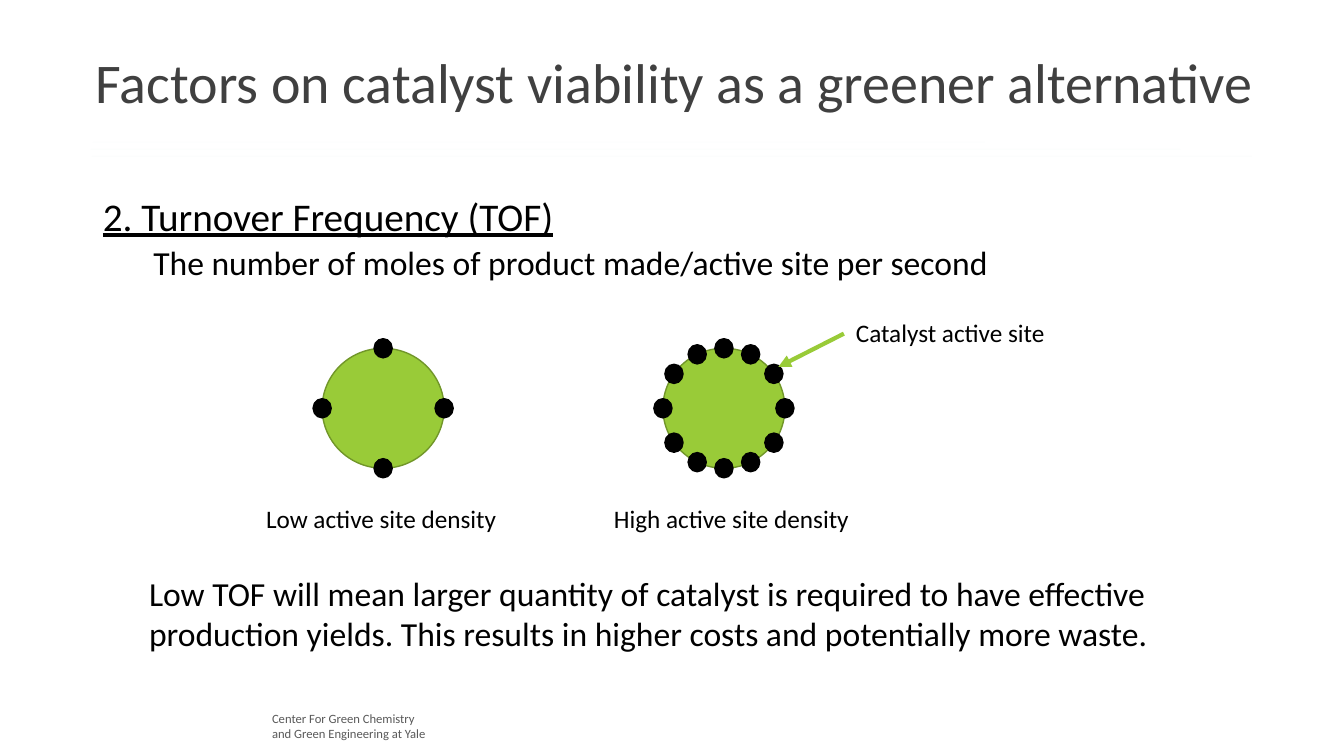
from math import cos, radians, sin

from lxml import etree
from pptx import Presentation
from pptx.dml.color import RGBColor
from pptx.enum.shapes import MSO_CONNECTOR, MSO_SHAPE
from pptx.enum.text import MSO_ANCHOR, MSO_AUTO_SIZE, PP_ALIGN
from pptx.oxml.ns import qn
from pptx.util import Inches, Pt

GREEN, DARK_GREEN, BLACK = "99CB38", "719629", "000000"


def write(shape, box, lines, size=18, color=BLACK, wrap=True, anchor=MSO_ANCHOR.TOP, spacing=1.0):
    """Place a shape and fill it with one unbulleted, left-aligned paragraph per line."""
    shape.left, shape.top, shape.width, shape.height = map(Inches, box)
    frame = shape.text_frame
    frame.text = "\n".join(lines)
    frame.word_wrap = wrap
    frame.auto_size = MSO_AUTO_SIZE.NONE
    frame.vertical_anchor = anchor
    for paragraph in frame.paragraphs:
        properties = paragraph._p.get_or_add_pPr()
        properties.set("marL", "0")
        properties.set("indent", "0")
        etree.SubElement(properties, qn("a:buNone"))
        paragraph.alignment = PP_ALIGN.LEFT
        paragraph.line_spacing = spacing
        paragraph.space_before = Pt(0)
        for run in paragraph.runs:
            run.font.name = "Calibri"
            run.font.size = Pt(size)
            run.font.color.rgb = RGBColor.from_string(color)
    return frame.paragraphs


def add_line(start, end, color, width):
    line = slide.shapes.add_connector(MSO_CONNECTOR.STRAIGHT, *map(Inches, start + end))
    line.line.color.rgb = RGBColor.from_string(color)
    line.line.width = Pt(width)
    etree.SubElement(line._element.spPr, qn("a:effectLst"))
    return line


presentation = Presentation()
presentation.slide_width = Inches(13.33)
presentation.slide_height = Inches(7.5)
slide = presentation.slides.add_slide(presentation.slide_layouts[1])

# Footer and the very faint rules under the title
write(slide.shapes.add_textbox(0, 0, 0, 0), (2.6, 7, 1.86, 0.4),
      ["Center For Green Chemistry", "and Green Engineering at Yale"], size=9, color="595959")
for left, right, top, color in [(0.92, 9.77, 1.41, "4EB3CF"),
                                (0.9, 11.71, 1.48, "44C1A3"),
                                (0.91, 12.42, 1.55, "37A76F")]:
    rule = add_line((left, top), (right, top), color, 0.5)
    rule_color = rule._element.spPr.find(".//" + qn("a:srgbClr"))
    etree.SubElement(rule_color, qn("a:alpha"), val="2000")

# Title and definition
write(slide.shapes.title, (0.85, 0.12, 12.42, 1.45),
      ["Factors on catalyst viability as a greener alternative"],
      size=40, color="404040", anchor=MSO_ANCHOR.MIDDLE, spacing=0.9)
heading, definition = write(
    slide.placeholders[1], (0.92, 1.91, 11.5, 1.28),
    ["2. Turnover Frequency (TOF)", "The number of moles of product made/active site per second"],
    size=28, spacing=0.9)
heading.runs[0].font.underline = True
definition.level = 1
definition._p.pPr.set("marL", str(Inches(0.5)))
definition.space_before = Pt(5)
definition.runs[0].font.size = Pt(24)

# Catalyst particles with active sites around the rim
center_y, radius_x, radius_y = 4.05, 0.605, 0.595
low_angles = [0, 90, 180, 270]
high_angles = [0, 35, 64, 90, 116, 145, 180, 215, 244, 270, 296, 325]
for center_x, angles in [(3.8, low_angles), (7.18, high_angles)]:
    ovals = [(center_x, center_y, 2 * radius_x, 2 * radius_y, GREEN, DARK_GREEN)]
    for angle in map(radians, angles):
        ovals.append((center_x + radius_x * cos(angle), center_y + radius_y * sin(angle),
                      0.18, 0.19, BLACK, BLACK))
    for x, y, width, height, fill, outline in ovals:
        oval = slide.shapes.add_shape(
            MSO_SHAPE.OVAL, Inches(x - width / 2), Inches(y - height / 2),
            Inches(width), Inches(height))
        oval.shadow.inherit = False
        oval.fill.solid()
        oval.fill.fore_color.rgb = RGBColor.from_string(fill)
        oval.line.color.rgb = RGBColor.from_string(outline)
        oval.line.width = Pt(1)

# Labels and conclusion
for box, label in [((2.54, 4.94, 2.51, 0.4), "Low active site density"),
                   ((5.99, 4.94, 2.56, 0.4), "High active site density"),
                   ((8.39, 3.1, 2.09, 0.4), "Catalyst active site")]:
    write(slide.shapes.add_textbox(0, 0, 0, 0), box, [label], wrap=False)
write(slide.shapes.add_textbox(0, 0, 0, 0), (1.38, 5.63, 11.26, 0.91),
      ["Low TOF will mean larger quantity of catalyst is required to have effective production "
       "yields. This results in higher costs and potentially more waste."], size=24)

# Arrow from the label to an active site
arrow = add_line((8.37, 3.31), (7.72, 3.64), GREEN, 3)
etree.SubElement(arrow.line._get_or_add_ln(), qn("a:tailEnd"), type="triangle")

presentation.save("out.pptx")
